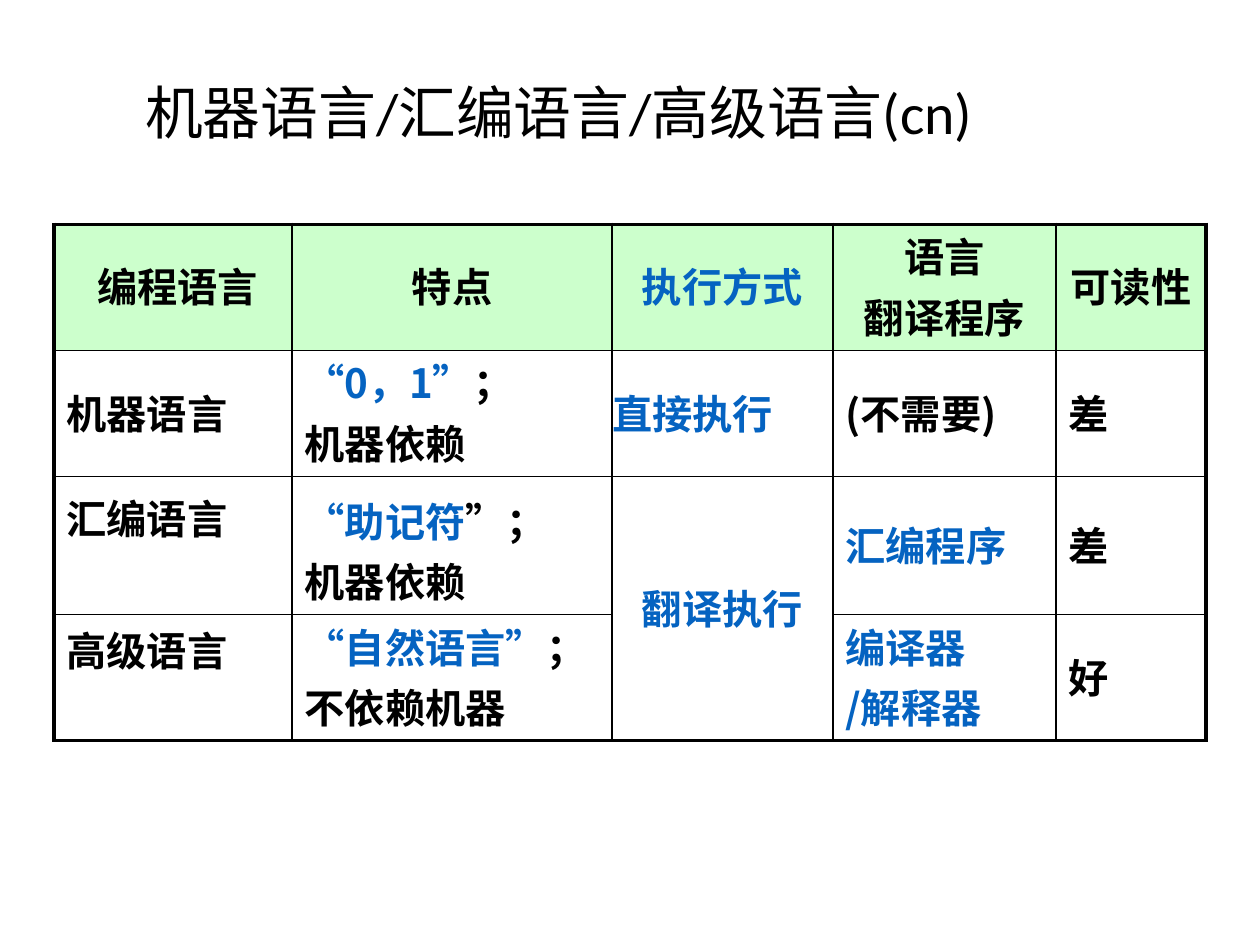
from dataclasses import dataclass

import pptx
import pptx.dml.color
import pptx.enum.lang
import pptx.enum.text
import pptx.oxml
import pptx.oxml.ns
import pptx.util
from pptx.util import Cm, Pt

BLACK, BLUE, GREEN = "000000", "0563C1", "CCFFCC"
CJK_FONT = "Noto Sans CJK SC"
LEFT, CENTER = pptx.enum.text.PP_ALIGN.LEFT, pptx.enum.text.PP_ALIGN.CENTER
MIDDLE, BOTTOM = pptx.enum.text.MSO_ANCHOR.MIDDLE, pptx.enum.text.MSO_ANCHOR.BOTTOM
COLUMN_WIDTHS = (4.8, 6.45, 4.45, 4.5, 3.02)
ROW_HEIGHTS = (2.51, 2.54, 2.79, 2.54)
SIDE_MARGIN, EDGE_MARGIN = 0.25, 0.13


@dataclass(frozen=True)
class Entry:
    """One table cell; each line is a tuple of (text, colour) runs."""
    lines: tuple
    align: int = LEFT
    anchor: int = MIDDLE
    side: float = SIDE_MARGIN
    bottom: float = EDGE_MARGIN
    rows: int = 1


def plain(*texts: str, color: str = BLACK, **layout) -> Entry:
    return Entry(tuple(((text, color),) for text in texts), **layout)


def feature(quoted: str, rest: str, dependence: str) -> Entry:
    return Entry((((quoted, BLUE), (rest, BLACK)), ((dependence, BLACK),)), anchor=BOTTOM)


def header(*texts: str, color: str = BLACK) -> Entry:
    return plain(*texts, color=color, align=CENTER)


ENTRIES = (
    (header(" 编程语言"), header("特点"), header("执行方式", color=BLUE),
     header("语言", "翻译程序"), header("可读性")),
    (plain("机器语言"), feature("“0，1”", "；", "机器依赖"),
     plain("直接执行", color=BLUE, side=0), plain("(不需要)"), plain("差")),
    (plain("汇编语言", bottom=1.2), feature("“助记符", "”；", "机器依赖"),
     plain("翻译执行", color=BLUE, align=CENTER, side=0, rows=2),
     plain("汇编程序", color=BLUE), plain("差")),
    (plain("高级语言", bottom=1.2), feature("“自然语言”", "；", "不依赖机器"),
     None, plain("编译器", "/解释器", color=BLUE), plain("好")),
)


def rgb(value: str) -> pptx.dml.color.RGBColor:
    return pptx.dml.color.RGBColor.from_string(value)


def add_run(paragraph, text: str, *, size: float, color: str = BLACK,
            bold: bool = False, latin: str = CJK_FONT) -> None:
    run = paragraph.add_run()
    run.text = text
    font = run.font
    font.size, font.bold, font.name = Pt(size), bold, latin
    font.color.rgb = rgb(color)
    font.language_id = pptx.enum.lang.MSO_LANGUAGE_ID.SIMPLIFIED_CHINESE
    east_asian = pptx.oxml.parse_xml(
        f'<a:ea {pptx.oxml.ns.nsdecls("a")} typeface="{CJK_FONT}"/>')
    run.font._element.find(pptx.oxml.ns.qn("a:latin")).addnext(east_asian)


def set_borders(cell, widths: dict) -> None:
    """Borders come before the fill, in the order L, R, T, B."""
    properties = cell._tc.get_or_add_tcPr()
    for position, (side, width) in enumerate(widths.items()):
        properties.insert(position, pptx.oxml.parse_xml(
            f'<a:ln{side} {pptx.oxml.ns.nsdecls("a")} w="{Pt(width)}">'
            f'<a:solidFill><a:srgbClr val="{BLACK}"/></a:solidFill></a:ln{side}>'))


def fill_entry(cell, entry: Entry) -> None:
    cell.vertical_anchor = entry.anchor
    cell.margin_left = cell.margin_right = Cm(entry.side)
    cell.margin_top, cell.margin_bottom = Cm(EDGE_MARGIN), Cm(entry.bottom)
    frame = cell.text_frame
    for number, line in enumerate(entry.lines):
        paragraph = frame.add_paragraph() if number else frame.paragraphs[0]
        paragraph.alignment = entry.align
        paragraph.line_spacing = 0.9
        if number:
            paragraph.space_before = Pt(4.6)
        for text, color in line:
            add_run(paragraph, text, size=23, color=color, bold=True)


def add_title(slide) -> None:
    title = slide.shapes.title
    title.left, title.top, title.width, title.height = Cm(2.67), Cm(1.4), Cm(21.64), Cm(1.88)
    title.text_frame.vertical_anchor = MIDDLE
    paragraph = title.text_frame.paragraphs[0]
    paragraph.alignment = LEFT
    paragraph.line_spacing = 0.9
    add_run(paragraph, "机器语言/汇编语言/高级语言(cn)", size=33, latin="Calibri")


def add_comparison(slide) -> None:
    row_count, column_count = len(ROW_HEIGHTS), len(COLUMN_WIDTHS)
    comparison = slide.shapes.add_table(
        row_count, column_count, Cm(1.09), Cm(4.52),
        Cm(sum(COLUMN_WIDTHS)), Cm(sum(ROW_HEIGHTS))).table
    comparison.first_row = comparison.horz_banding = False
    for column, width in zip(comparison.columns, COLUMN_WIDTHS):
        column.width = Cm(width)
    for row, height in zip(comparison.rows, ROW_HEIGHTS):
        row.height = Cm(height)

    for r, entries in enumerate(ENTRIES):
        for c, entry in enumerate(entries):
            cell = comparison.cell(r, c)
            last_row = r + (entry.rows if entry else 1) - 1
            if entry:
                fill_entry(cell, entry)
                if entry.rows > 1:
                    cell.merge(comparison.cell(last_row, c))
            if r == 0:
                cell.fill.solid()
                cell.fill.fore_color.rgb = rgb(GREEN)
            else:
                cell.fill.background()
            outer = {"L": c == 0, "R": c == column_count - 1,
                     "T": r == 0, "B": last_row == row_count - 1}
            set_borders(cell, {side: 2.25 if edge else 1 for side, edge in outer.items()
                               if entry or side != "T"})


def main() -> None:
    deck = pptx.Presentation()
    deck.slide_width, deck.slide_height = Cm(25.4), Cm(19.05)
    slide = deck.slides.add_slide(deck.slide_layouts[5])
    add_title(slide)
    add_comparison(slide)
    deck.save("out.pptx")


if __name__ == "__main__":
    main()
